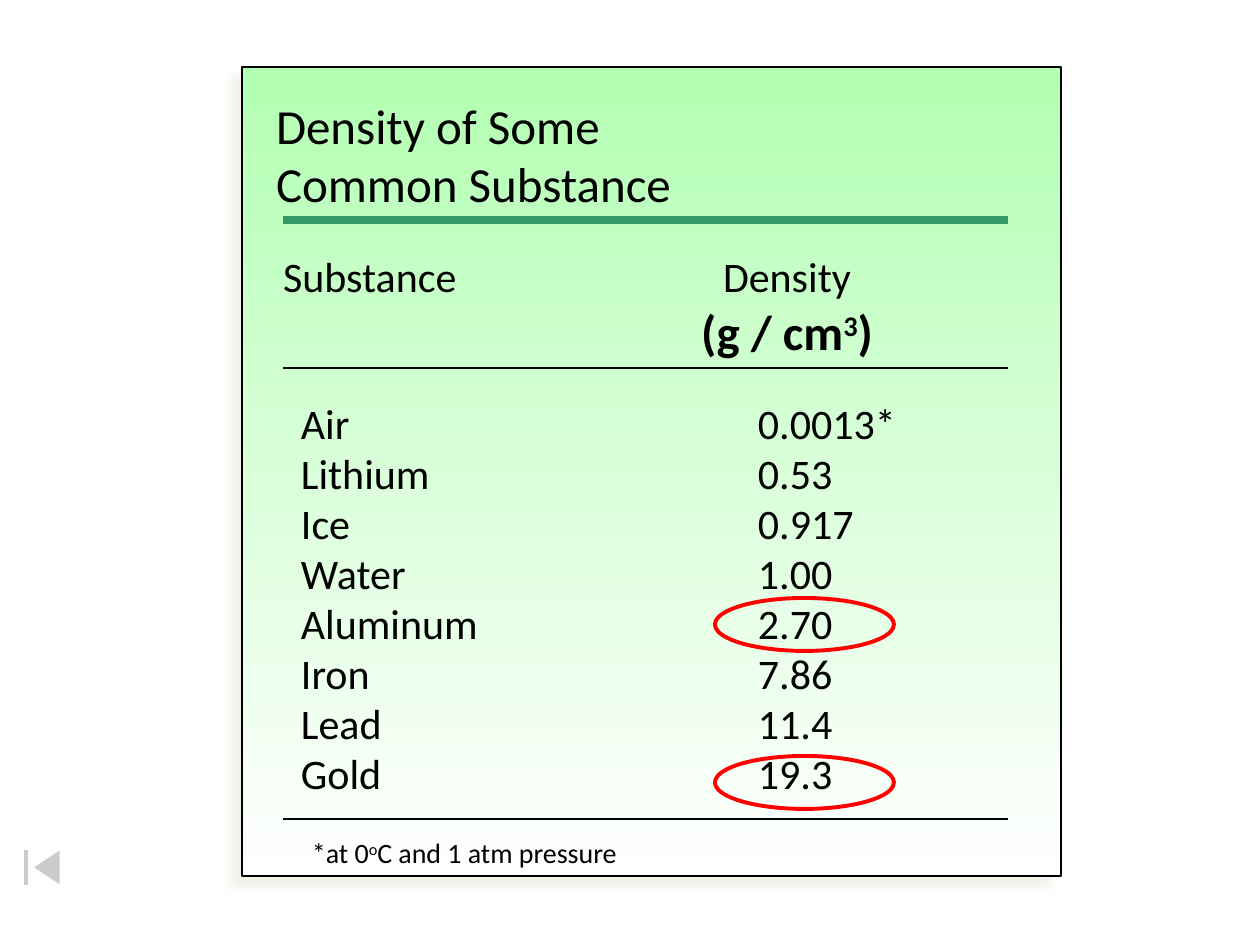
from lxml.etree import SubElement
from pptx import Presentation
from pptx.dml.color import RGBColor
from pptx.enum.shapes import MSO_CONNECTOR, MSO_SHAPE
from pptx.enum.text import MSO_ANCHOR, PP_ALIGN
from pptx.oxml.ns import qn
from pptx.util import Pt

SCALE = 914400 // 126
EDGES = ("margin_left", "margin_top", "margin_right", "margin_bottom")
PLAIN = "{2D5ABB26-0587-4C30-8999-92F81FD0307C}"
ROWS = [
    ("Air", "0.0013*"),
    ("Lithium", "0.53"),
    ("Ice", "0.917"),
    ("Water", "1.00"),
    ("Aluminum", "2.70"),
    ("Iron", "7.86"),
    ("Lead", "11.4"),
    ("Gold", "19.3"),
]


def px(n):
    return n * SCALE


def rgb(code):
    return RGBColor.from_string(code)


def apply(item, form):
    for key, val in form.items():
        setattr(item, key, val)


def pad(*sides):
    return {edge: px(n) for edge, n in zip(EDGES, sides)}


class Deck:
    font = {"name": "Calibri", "bold": False}
    ink = "000000"

    def __init__(self, wide, high):
        self.pres = Presentation()
        apply(self.pres, {"slide_width": px(wide), "slide_height": px(high)})
        self.slide = self.pres.slides.add_slide(self.pres.slide_layouts[5])
        self.shapes = self.slide.shapes

    def label(self, para, runs, size, bold=False, **form):
        apply(para, form)
        for text, lift in runs:
            run = para.add_run()
            run.text = text
            apply(run.font, {**self.font, "size": Pt(size), "bold": bold})
            run.font.color.rgb = rgb(self.ink)
            if lift:
                run.font._element.set("baseline", "30000")

    def shape(self, kind, box, line, width):
        item = self.shapes.add_shape(kind, *map(px, box))
        item.shadow.inherit = False
        item.fill.background()
        item.line.color.rgb = rgb(line)
        item.line.width = Pt(width)
        return item

    def card(self, box, top, base, glow):
        item = self.shape(MSO_SHAPE.RECTANGLE, box, self.ink, 0.75)
        item.fill.gradient()
        item.fill.gradient_angle = 270
        for stop, code in zip(item.fill.gradient_stops, (top, base)):
            stop.color.rgb = rgb(code)
        effect = item._element.spPr.find(qn("a:effectLst"))
        shade = SubElement(effect, qn("a:outerShdw"), blurRad=str(Pt(5)),
                           dist=str(Pt(8.5)), dir="8100000", algn="tr")
        tint = SubElement(shade, qn("a:srgbClr"), val=glow)
        SubElement(tint, qn("a:alpha"), val="75000")

    def button(self, box, code):
        item = self.shape(MSO_SHAPE.ACTION_BUTTON_BEGINNING, box, code, 0.75)
        item.fill.solid()
        item.fill.fore_color.rgb = rgb(code)
        tint = item._element.spPr.find(qn("a:solidFill"))[0]
        SubElement(tint, qn("a:alpha"), val="50000")

    def rule(self, left, right, y, code, width):
        ends = map(px, (left, y, right, y))
        item = self.shapes.add_connector(MSO_CONNECTOR.STRAIGHT, *ends)
        item.line.color.rgb = rgb(code)
        item.line.width = Pt(width)
        SubElement(item._element.spPr, qn("a:effectLst"))

    def title(self, box, lines, size):
        item = self.shapes.title
        apply(item, dict(zip(("left", "top", "width", "height"), map(px, box))))
        frame = item.text_frame
        apply(frame, {**pad(0, 0, 0, 0), "vertical_anchor": MSO_ANCHOR.TOP})
        for i, line in enumerate(lines):
            para = frame.add_paragraph() if i else frame.paragraphs[0]
            self.label(para, [(line, 0)], size, alignment=PP_ALIGN.LEFT)
        self.shapes._spTree.append(item._element)

    def note(self, box, runs, size):
        frame = self.shapes.add_textbox(*map(px, box)).text_frame
        apply(frame, {**pad(0, 0, 0, 0), "word_wrap": True})
        self.label(frame.paragraphs[0], runs, size)

    def cell(self, table, row, col, sides):
        cell = table.cell(row, col)
        cell.fill.background()
        apply(cell, pad(*sides))
        return cell.text_frame

    def table(self, x, y, cols, head, step, rows):
        box = map(px, (x, y, sum(cols), head + step * len(rows)))
        table = self.shapes.add_table(len(rows) + 1, len(cols), *box).table
        apply(table, {"first_row": False, "horz_banding": False})
        table._tbl.tblPr.find(qn("a:tableStyleId")).text = PLAIN
        for col, wide in zip(table.columns, cols):
            col.width = px(wide)
        for i, row in enumerate(table.rows):
            row.height = px(step if i else head)
        name = self.cell(table, 0, 0, (0, 0, 0, 0))
        self.label(name.paragraphs[0], [("Substance", 0)], 24)
        unit = self.cell(table, 0, 1, (0, 0, 124, 0))
        mid = {"alignment": PP_ALIGN.CENTER}
        self.label(unit.paragraphs[0], [("Density", 0)], 24, **mid)
        parts = [("(g / cm", 0), ("3", 1), (")", 0)]
        self.label(unit.add_paragraph(), parts, 28, True, **mid)
        for i, row in enumerate(rows, 1):
            for j, (text, left) in enumerate(zip(row, (18, 68))):
                frame = self.cell(table, i, j, (left, 0, 0, 0))
                self.label(frame.paragraphs[0], [(text, 0)], 24,
                           line_spacing=Pt(28))


def main():
    deck = Deck(1260, 945)
    deck.card((242, 67, 819, 809), "B3FFB3", "FFFFFF", "EEECE1")
    deck.title((276, 95, 732, 120), ["Density of Some", "Common Substance"], 28)
    deck.table(283, 253, (407, 318), 149, 50, ROWS)
    for y, code, width in ((220, "339966", 4.5), (368, "000000", 1.5),
                           (819, "000000", 1.5)):
        deck.rule(283, 1008, y, code, width)
    note = [("*at 0", 0), ("o", 1), ("C and 1 atm pressure", 0)]
    deck.note((312, 836, 340, 35), note, 16)
    deck.button((0, 843, 84, 49), "FFFFFF")
    for y in (598, 756):
        deck.shape(MSO_SHAPE.OVAL, (715, y, 179, 53), "FF0000", 2.25)
    deck.pres.save("out.pptx")


if __name__ == "__main__":
    main()
